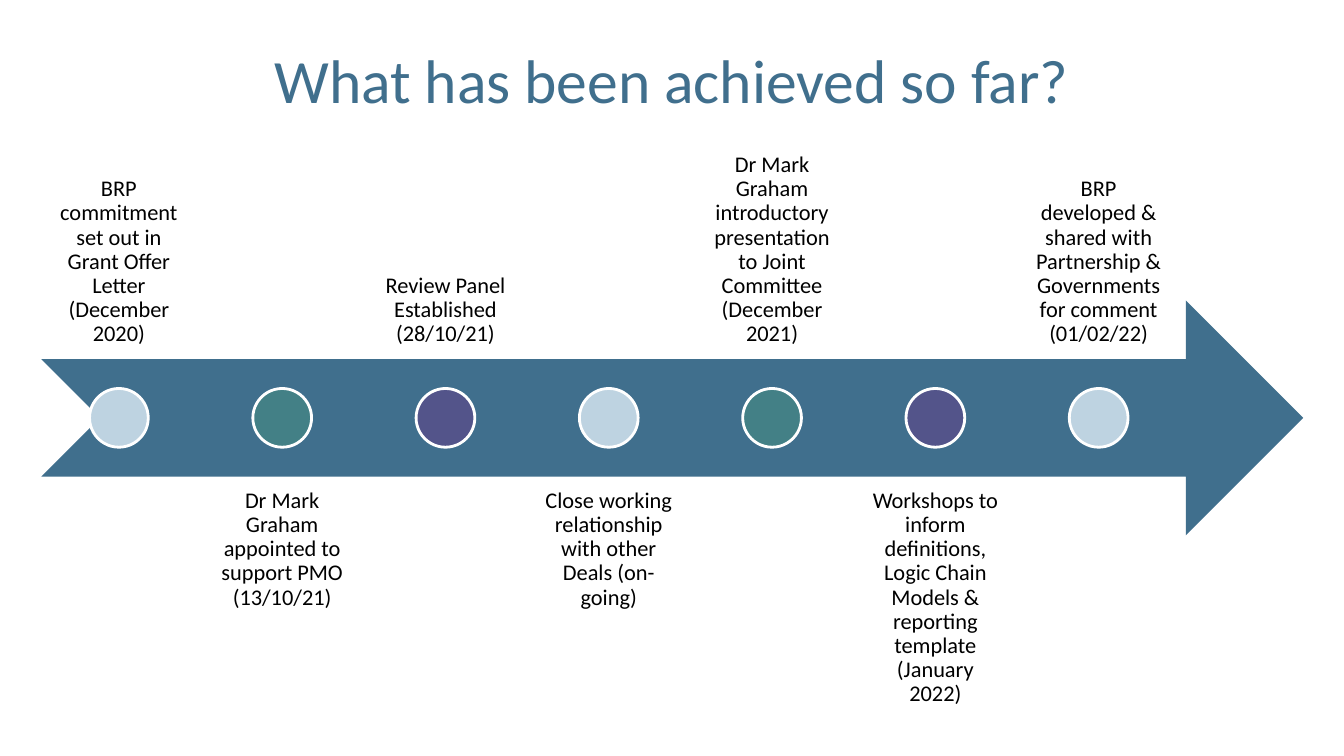
import dataclasses
import itertools

import pptx
import pptx.dml.color
import pptx.enum.shapes
import pptx.enum.text
import pptx.util

Pt = pptx.util.Pt
Shape = pptx.enum.shapes.MSO_SHAPE
Anchor = pptx.enum.text.MSO_ANCHOR


@dataclasses.dataclass(frozen=True)
class Theme:
    """Colours, font and type sizes of the deck."""
    font: str = "Calibri"
    title_size: float = 44
    label_size: float = 16
    accent: str = "406F8D"
    ink: str = "000000"
    outline: str = "FFFFFF"
    dots: tuple = ("BED3E1", "438086", "53548A")


@dataclasses.dataclass(frozen=True)
class Box:
    """A rectangle in points."""
    left: float
    top: float
    width: float
    height: float

    def lengths(self):
        """Return the four lengths for python-pptx."""
        return [Pt(value) for value in dataclasses.astuple(self)]


THEME = Theme()
TITLE = "What has been achieved so far?"
MILESTONES = (
    "BRP commitment set out in Grant Offer Letter (December 2020)",
    "Dr Mark Graham appointed to support PMO (13/10/21)",
    "Review Panel Established (28/10/21)",
    "Close working relationship with other Deals (on-going)",
    "Dr Mark Graham introductory presentation to Joint Committee (December 2021)",
    "Workshops to inform definitions, Logic Chain Models & reporting template (January 2022)",
    "BRP developed & shared with Partnership & Governments for comment (01/02/22)",
)


def colour(code):
    """Turn a hex code into a colour."""
    return pptx.dml.color.RGBColor.from_string(code)


def write(frame, text, size, code, anchor):
    """Write one centred paragraph into a text frame."""
    frame.word_wrap = True
    frame.auto_size = pptx.enum.text.MSO_AUTO_SIZE.NONE
    frame.vertical_anchor = anchor
    para = frame.paragraphs[0]
    para.alignment = pptx.enum.text.PP_ALIGN.CENTER
    para.line_spacing = 0.9
    span = para.add_run()
    span.text = text
    span.font.name = THEME.font
    span.font.size = Pt(size)
    span.font.color.rgb = colour(code)


def add_title(page, box):
    """Place the page title in its placeholder."""
    title = page.shapes.title
    title.left, title.top, title.width, title.height = box.lengths()
    write(title.text_frame, TITLE, THEME.title_size, THEME.accent, Anchor.MIDDLE)


def add_solid(shapes, kind, box, code):
    """Add a filled preset shape without a line."""
    solid = shapes.add_shape(kind, *box.lengths())
    solid.shadow.inherit = False
    solid.fill.solid()
    solid.fill.fore_color.rgb = colour(code)
    solid.line.fill.background()
    return solid


def add_label(shapes, box, text, anchor):
    """Add the wording of a milestone."""
    frame = shapes.add_textbox(*box.lengths()).text_frame
    frame.margin_left = frame.margin_right = Pt(8.96)
    frame.margin_top = frame.margin_bottom = Pt(8.96)
    write(frame, text, THEME.label_size, THEME.ink, anchor)


def add_timeline(page, box):
    """Draw the arrow with milestones alternating above and below its shaft."""
    shapes = page.shapes.add_group_shape().shapes
    add_solid(shapes, Shape.NOTCHED_RIGHT_ARROW, box, THEME.accent)
    label_width, pitch = 110.9, 116.64
    quarter = box.height / 4
    dot_top = box.top + 1.5 * quarter
    above = (box.top + quarter - box.height, Anchor.BOTTOM)
    below = (box.top + 3 * quarter, Anchor.TOP)
    steps = zip(MILESTONES, itertools.cycle((above, below)), itertools.cycle(THEME.dots))
    for index, (text, (top, anchor), code) in enumerate(steps):
        left = box.left + index * pitch
        add_label(shapes, Box(left, top, label_width, box.height), text, anchor)
        dot_box = Box(left + (label_width - quarter) / 2, dot_top, quarter, quarter)
        dot = add_solid(shapes, Shape.OVAL, dot_box, code)
        dot.line.color.rgb = colour(THEME.outline)
        dot.line.width = Pt(2)


def main():
    """Build and save the deck."""
    deck = pptx.Presentation()
    deck.slide_width, deck.slide_height = Pt(960), Pt(540)
    page = deck.slides.add_slide(deck.slide_layouts[5])
    add_title(page, Box(48, 15, 864, 90))
    add_timeline(page, Box(29.5, 214.6, 901.4, 167.8))
    deck.save("out.pptx")


if __name__ == "__main__":
    main()
